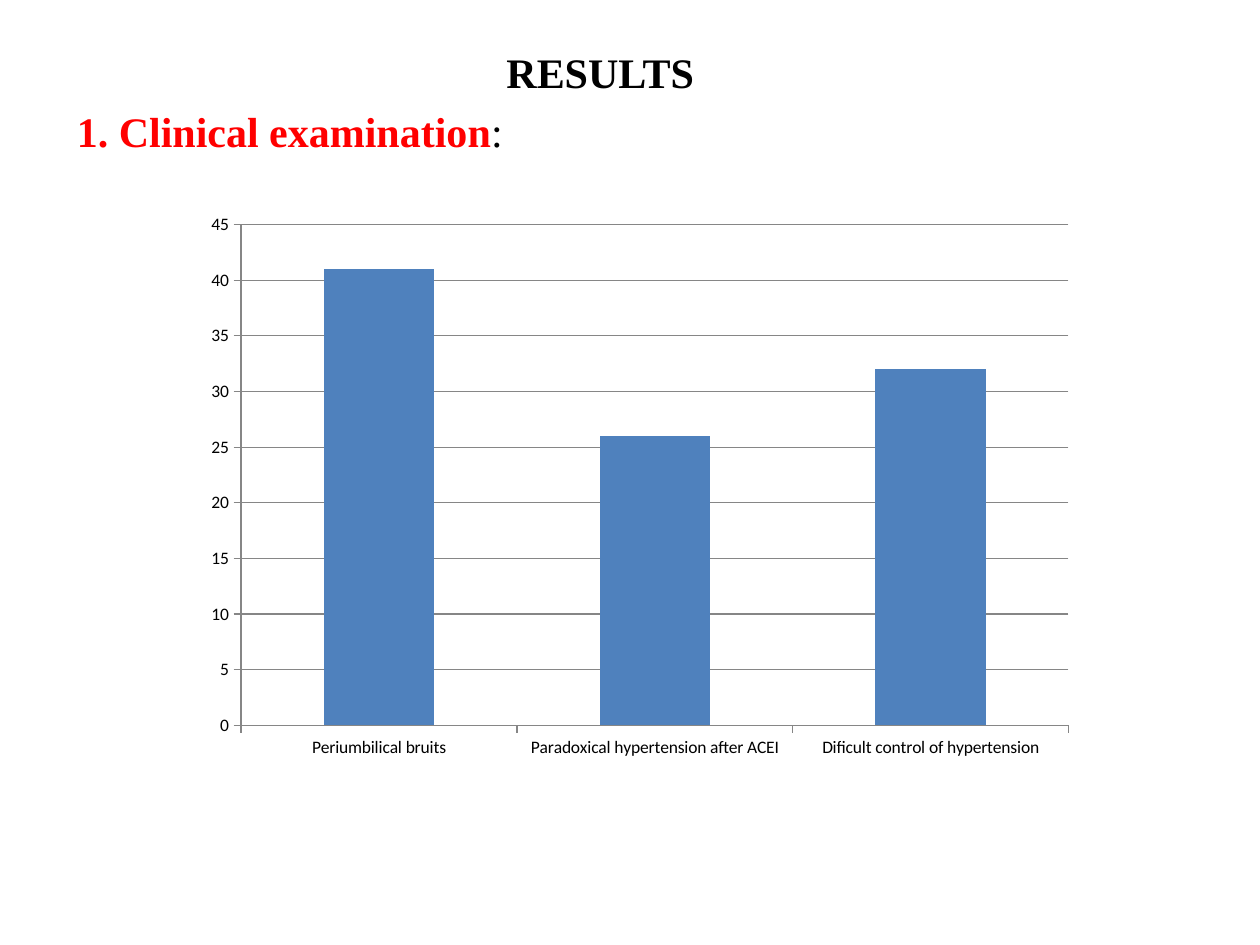
from pptx import Presentation
from pptx.chart.data import CategoryChartData
from pptx.dml.color import RGBColor
from pptx.enum.chart import XL_CHART_TYPE, XL_TICK_MARK
from pptx.enum.text import MSO_ANCHOR, MSO_AUTO_SIZE, PP_ALIGN
from pptx.util import Cm, Pt

COLUMN = XL_CHART_TYPE.COLUMN_CLUSTERED
OUTSIDE = XL_TICK_MARK.OUTSIDE
TOP = MSO_ANCHOR.TOP
NO_AUTOFIT = MSO_AUTO_SIZE.NONE
CENTER, LEFT = PP_ALIGN.CENTER, PP_ALIGN.LEFT

TITLE_ONLY = 5
COLORS = {"text": "000000", "heading": "FF0000", "bar": "4F81BD", "axis": "868686"}
FINDINGS = {
    "Periumbilical bruits": 41,
    "Paradoxical hypertension after ACEI": 26,
    "Dificult control of hypertension": 32,
}


def color(name):
    return RGBColor.from_string(COLORS[name])


def place_text(shape, box, runs, alignment):
    """Fill the shape with one line of (text, color name, bold) runs."""
    shape.left, shape.top, shape.width, shape.height = (Cm(value) for value in box)
    frame = shape.text_frame
    frame.word_wrap = True
    frame.auto_size = NO_AUTOFIT
    frame.vertical_anchor = TOP
    paragraph = frame.paragraphs[0]
    paragraph.alignment = alignment
    paragraph.line_spacing = 1.0
    paragraph.font.name = "Times New Roman"
    paragraph.font.size = Pt(24)
    for text, color_name, bold in runs:
        run = paragraph.add_run()
        run.text = text
        run.font.bold = bold
        run.font.color.rgb = color(color_name)


def add_header(slide, left, top, width):
    line_height = 1.2
    place_text(slide.shapes.title, (left, top, width, line_height),
               [("RESULTS", "text", True)], CENTER)
    heading = slide.shapes.add_textbox(0, 0, 0, 0)
    place_text(heading, (left, top + line_height, width, line_height),
               [("1. Clinical examination", "heading", True), (":", "text", False)], LEFT)


def add_findings_chart(slide, left, top, width, height):
    data = CategoryChartData()
    data.categories = list(FINDINGS)
    data.add_series("Series 1", list(FINDINGS.values()))
    chart = slide.shapes.add_chart(
        COLUMN, Cm(left), Cm(top), Cm(width), Cm(height), data).chart
    chart.has_legend = False
    chart.has_title = False
    chart.font.name = "Calibri"
    chart.font.size = Pt(10)
    chart.font.color.rgb = color("text")

    plot = chart.plots[0]
    plot.gap_width = 150
    plot.vary_by_categories = False
    fill = plot.series[0].format.fill
    fill.solid()
    fill.fore_color.rgb = color("bar")

    value_axis = chart.value_axis
    value_axis.minimum_scale, value_axis.maximum_scale = 0, 45
    value_axis.major_unit = 5
    value_axis.has_major_gridlines = True
    for axis in (chart.category_axis, value_axis):
        axis.major_tick_mark = OUTSIDE
    for line_owner in (chart.category_axis, value_axis, value_axis.major_gridlines):
        line_owner.format.line.color.rgb = color("axis")
        line_owner.format.line.width = Pt(0.75)


def main():
    presentation = Presentation()
    presentation.slide_width, presentation.slide_height = Cm(25.4), Cm(19.05)
    slide = presentation.slides.add_slide(presentation.slide_layouts[TITLE_ONLY])
    add_header(slide, left=1.3, top=0.8, width=21.6)
    add_findings_chart(slide, left=3.9, top=4.1, width=18, height=11.4)
    presentation.save("out.pptx")


if __name__ == "__main__":
    main()
